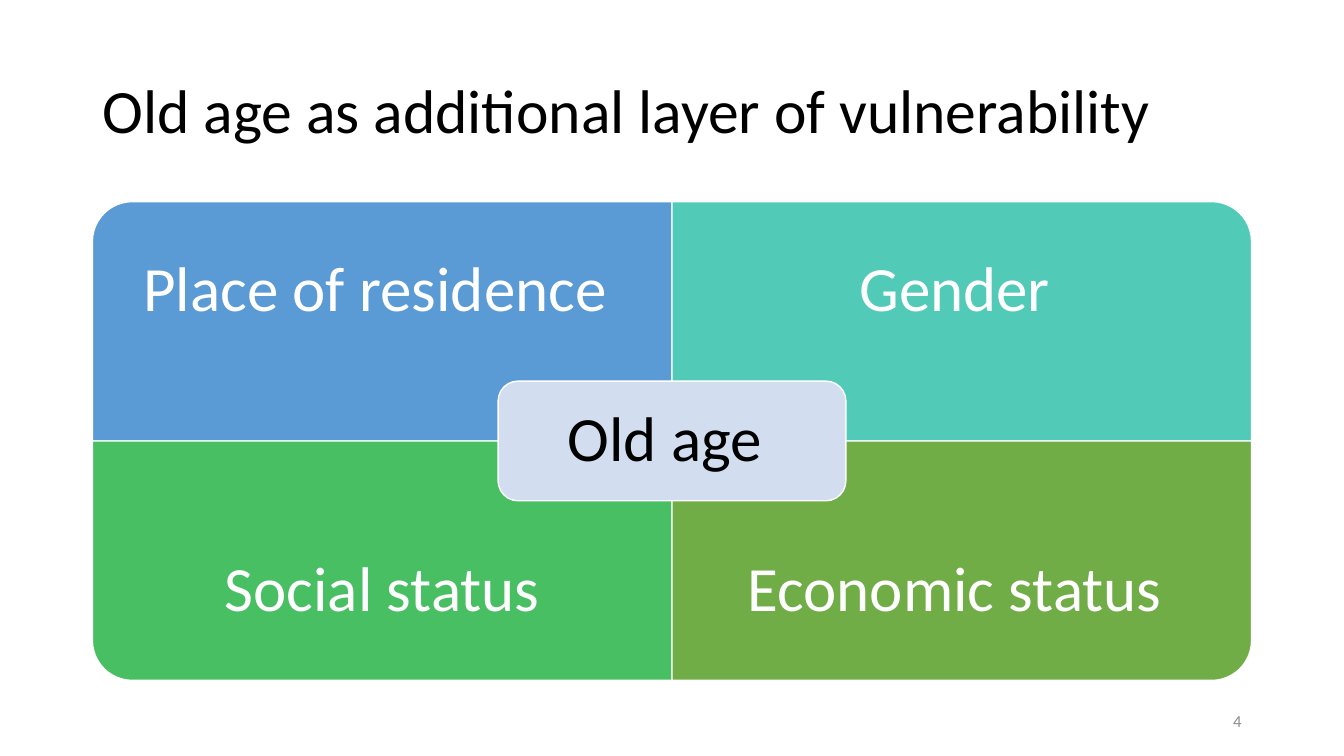
from dataclasses import dataclass

from pptx import Presentation
from pptx import util as u
from pptx.dml.color import RGBColor
from pptx.enum import shapes, text


@dataclass(frozen=True)
class Theme:
    font: str = "Calibri"
    black: str = "000000"
    white: str = "FFFFFF"
    gray: str = "8C8C8C"
    core: str = "D2DEEF"
    title_size: int = 44
    label_size: int = 45
    number_size: int = 12


THEME = Theme()

# Matrix geometry in points
LEFT, TOP = 66, 144
QUAD_W, QUAD_H = 414, 171
CENTER_X, CENTER_Y = LEFT + QUAD_W, TOP + QUAD_H
CORE_W, CORE_H = 248.4, 85.5
LABEL_H = QUAD_H - CORE_H / 2

# Label, fill, column, row, rotation that turns the round corner outwards
QUADRANTS = [
    ("Place of residence ", "5B9BD5", 0, 0, 270),
    ("Gender ", "52CAB8", 1, 0, 0),
    ("Social status", "49BF64", 0, 1, 180),
    ("Economic status ", "70AD47", 1, 1, 90),
]


def apply_format(target, values):
    for name, value in values.items():
        setattr(target, name, value)


def write(frame, words, size, color, align, inset=None, spacing=0.9):
    apply_format(frame, {
        "word_wrap": True,
        "auto_size": text.MSO_AUTO_SIZE.NONE,
        "vertical_anchor": text.MSO_ANCHOR.MIDDLE,
    })
    if inset is not None:
        sides = ("left", "top", "right", "bottom")
        apply_format(frame, {f"margin_{side}": u.Pt(inset) for side in sides})
    paragraph = frame.paragraphs[0]
    apply_format(paragraph, {"alignment": align, "line_spacing": spacing})
    run = paragraph.add_run()
    run.text = words
    apply_format(run.font, {"name": THEME.font, "size": u.Pt(size)})
    run.font.color.rgb = RGBColor.from_string(color)


def add_panel(slide, preset, center, size, fill, rotation=0):
    (x, y), (w, h) = center, size
    panel = slide.shapes.add_shape(
        preset, u.Pt(x - w / 2), u.Pt(y - h / 2), u.Pt(w), u.Pt(h))
    panel.rotation = rotation
    panel.shadow.inherit = False
    panel.fill.solid()
    panel.fill.fore_color.rgb = RGBColor.from_string(fill)
    panel.line.color.rgb = RGBColor.from_string(THEME.white)
    panel.line.width = u.Pt(1)
    return panel


def add_label(slide, box, *style, **options):
    label = slide.shapes.add_textbox(*(u.Pt(value) for value in box))
    write(label.text_frame, *style, **options)


def add_title(slide, words):
    title = slide.shapes.title
    apply_format(title, {"left": u.Pt(66), "top": u.Pt(28.8),
                         "width": u.Pt(828), "height": u.Pt(104.4)})
    write(title.text_frame, words, THEME.title_size, THEME.black, text.PP_ALIGN.LEFT)


def add_quadrant(slide, words, fill, column, row, rotation):
    left = LEFT + column * QUAD_W
    center = (left + QUAD_W / 2, TOP + (row + 0.5) * QUAD_H)
    # A quarter turn swaps width and height
    size = (QUAD_H, QUAD_W) if rotation % 180 else (QUAD_W, QUAD_H)
    add_panel(slide, shapes.MSO_SHAPE.ROUND_1_RECTANGLE, center, size, fill, rotation)
    # The label stays clear of the core box
    label_top = TOP + row * (2 * QUAD_H - LABEL_H)
    add_label(slide, (left, label_top, QUAD_W, LABEL_H), words,
              THEME.label_size, THEME.white, text.PP_ALIGN.CENTER, inset=25)


def add_core(slide, words):
    core = add_panel(slide, shapes.MSO_SHAPE.ROUNDED_RECTANGLE,
                     (CENTER_X, CENTER_Y), (CORE_W, CORE_H), THEME.core)
    write(core.text_frame, words, THEME.label_size, THEME.black,
          text.PP_ALIGN.CENTER, inset=18)


def main():
    deck = Presentation()
    apply_format(deck, {"slide_width": u.Pt(960), "slide_height": u.Pt(540)})
    slide = deck.slides.add_slide(deck.slide_layouts.get_by_name("Title Only"))

    add_title(slide, "Old age as additional layer of vulnerability")

    # Four factors around old age
    for quadrant in QUADRANTS:
        add_quadrant(slide, *quadrant)
    add_core(slide, "Old age ")

    # Slide number
    add_label(slide, (678, 500.5, 216, 28.75), "4", THEME.number_size,
              THEME.gray, text.PP_ALIGN.RIGHT, spacing=1.0)

    deck.save("out.pptx")


if __name__ == "__main__":
    main()
